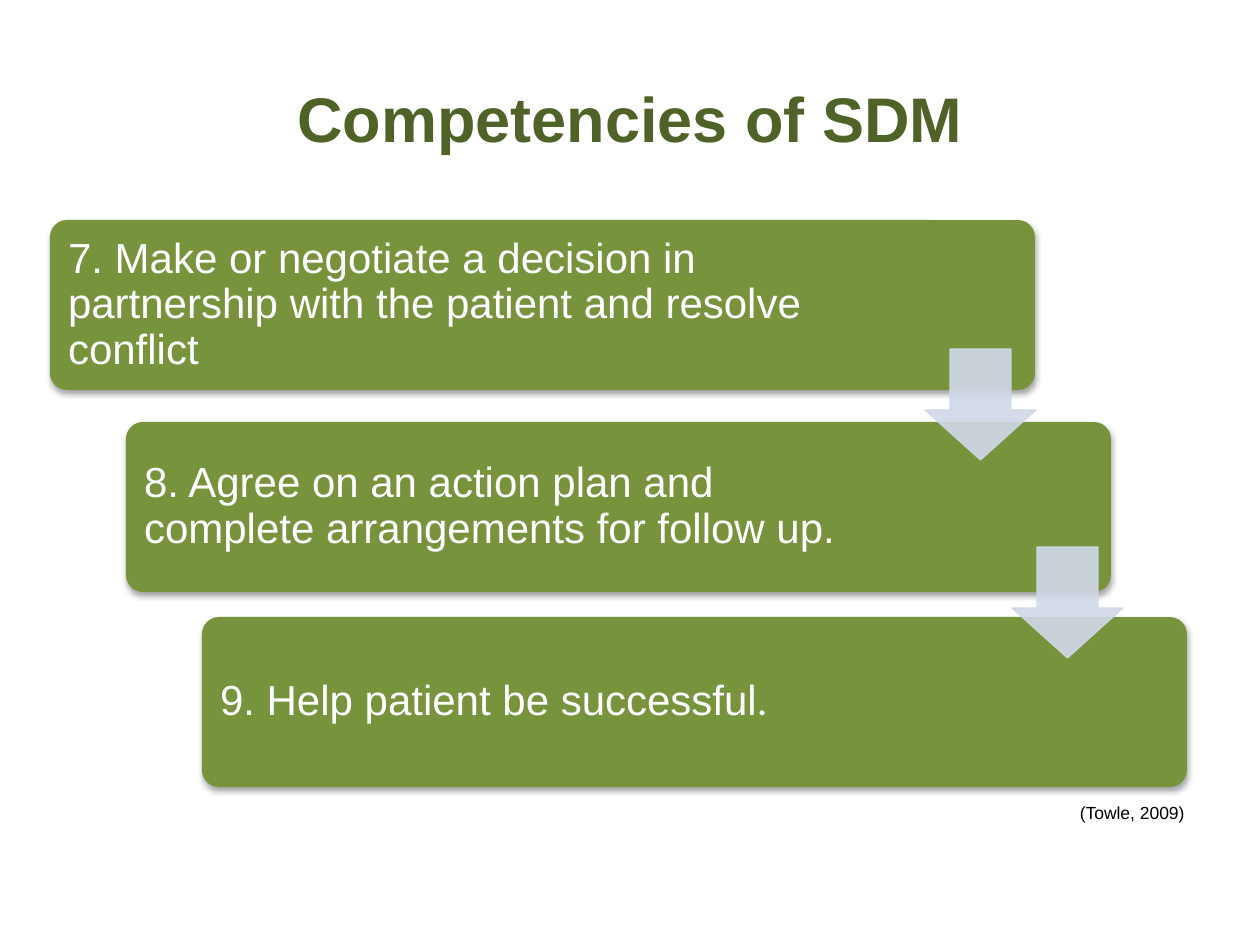
from dataclasses import dataclass

from lxml import etree
from pptx import Presentation
from pptx.dml.color import RGBColor
from pptx.enum.shapes import MSO_SHAPE
from pptx.enum.text import MSO_ANCHOR, MSO_AUTO_SIZE, PP_ALIGN
from pptx.oxml.ns import qn
from pptx.util import Emu, Pt

ROUND_RECT, DOWN_ARROW = MSO_SHAPE.ROUNDED_RECTANGLE, MSO_SHAPE.DOWN_ARROW
MIDDLE, BOTTOM = MSO_ANCHOR.MIDDLE, MSO_ANCHOR.BOTTOM
LEFT, CENTER, RIGHT = PP_ALIGN.LEFT, PP_ALIGN.CENTER, PP_ALIGN.RIGHT
NO_AUTOFIT = MSO_AUTO_SIZE.NONE

PX = 914400 / 126  # EMU per px
COLORS = {"title": "4F6228", "step": "77933C", "step_text": "FFFFFF",
          "arrow": "D0D8E8", "citation": "000000", "shadow": "000000"}
STEP_W, STEP_H, STEP_SHIFT = 985, 170, 76
TEXT_INSET, ARROW_SIZE = 5, 111


@dataclass
class Step:
    top: int
    text_width: int
    runs: list[tuple[str, str]]  # text, font


@dataclass
class Arrow:
    left: int
    top: int


STEPS = [
    Step(220, 801, [("7. Make or negotiate a decision in partnership with "
                     "the patient and resolve conflict", "Arial")]),
    Step(422, 777, [("8. Agree on an action plan and complete arrangements "
                     "for follow up.", "Arial")]),
    Step(617, 777, [("9. Help patient be successful", "Arial"),
                    (".", "Calibri")]),
]
ARROWS = [Arrow(925, 349), Arrow(1012, 547)]


def px(*lengths: int) -> list[Emu]:
    return [Emu(round(n * PX)) for n in lengths]


def rgb(name: str) -> RGBColor:
    return RGBColor.from_string(COLORS[name])


def add_run(p, text: str, size: int, color: str, font: str = "Arial",
            bold: bool = False) -> None:
    r = p.add_run()
    r.text = text
    r.font.name, r.font.size, r.font.bold = font, Pt(size), bold
    r.font.color.rgb = rgb(color)


def place(sp, left: int, top: int, width: int, height: int) -> None:
    sp.left, sp.top, sp.width, sp.height = px(left, top, width, height)


def set_frame(sp, anchor, align):
    tf = sp.text_frame
    tf.word_wrap, tf.auto_size, tf.vertical_anchor = True, NO_AUTOFIT, anchor
    p = tf.paragraphs[0]
    p.alignment, p.space_before = align, Pt(0)
    return tf, p


def add_shadow(sp) -> None:
    effects = sp._element.spPr.find(qn("a:effectLst"))
    outer = etree.SubElement(effects, qn("a:outerShdw"), blurRad=str(Pt(3.1)),
                             dist=str(Pt(1.8)), dir="5400000", rotWithShape="0")
    color = etree.SubElement(outer, qn("a:srgbClr"), val=COLORS["shadow"])
    etree.SubElement(color, qn("a:alpha"), val="35000")


def add_step(s, step: Step, left: int) -> None:
    sp = s.shapes.add_shape(ROUND_RECT, *px(left, step.top, STEP_W, STEP_H))
    sp.adjustments[0] = 0.1
    sp.fill.solid()
    sp.fill.fore_color.rgb = rgb("step")
    sp.line.fill.background()
    sp.shadow.inherit = False
    add_shadow(sp)

    box = s.shapes.add_textbox(*px(left + TEXT_INSET, step.top + TEXT_INSET,
                                   step.text_width, STEP_H - 2 * TEXT_INSET))
    tf, p = set_frame(box, MIDDLE, LEFT)
    tf.margin_left, tf.margin_top, tf.margin_right, tf.margin_bottom = px(*[13] * 4)
    p.line_spacing = 0.9
    for text, font in step.runs:
        add_run(p, text, 24, "step_text", font)


def add_arrow(s, arrow: Arrow) -> None:
    sp = s.shapes.add_shape(DOWN_ARROW, *px(arrow.left, arrow.top,
                                            ARROW_SIZE, ARROW_SIZE))
    sp.adjustments[0], sp.adjustments[1] = 0.55, 0.45
    sp.shadow.inherit = False
    sp.fill.solid()
    sp.line.width = Pt(0.75)
    for color in (sp.fill.fore_color, sp.line.color):
        color.rgb = rgb("arrow")
    for clr in sp._element.spPr.iter(qn("a:srgbClr")):
        etree.SubElement(clr, qn("a:alpha"), val="90000")


def main() -> None:
    prs = Presentation()
    prs.slide_width, prs.slide_height = px(1260, 945)
    s = prs.slides.add_slide(prs.slide_layouts[1])

    # Title
    title = s.shapes.title
    place(title, 63, 38, 1134, 158)
    _, p = set_frame(title, MIDDLE, CENTER)
    add_run(p, "Competencies of SDM", 36, "title", bold=True)

    # Staircase of steps, then the arrows between them
    for i, step in enumerate(STEPS):
        add_step(s, step, 50 + i * STEP_SHIFT)
    for arrow in ARROWS:
        add_arrow(s, arrow)

    # Citation
    body = s.placeholders[1]
    place(body, 823, 780, 374, 49)
    _, p = set_frame(body, BOTTOM, RIGHT)
    pPr = p._p.get_or_add_pPr()
    pPr.set("marL", "0")
    pPr.set("indent", "0")
    p.line_spacing, p.space_after = 0.8, Pt(12)
    etree.SubElement(pPr, qn("a:buNone"))
    add_run(p, "(Towle, 2009)", 10, "citation")
    s.shapes._spTree.append(body._element)

    prs.save("out.pptx")


if __name__ == "__main__":
    main()
